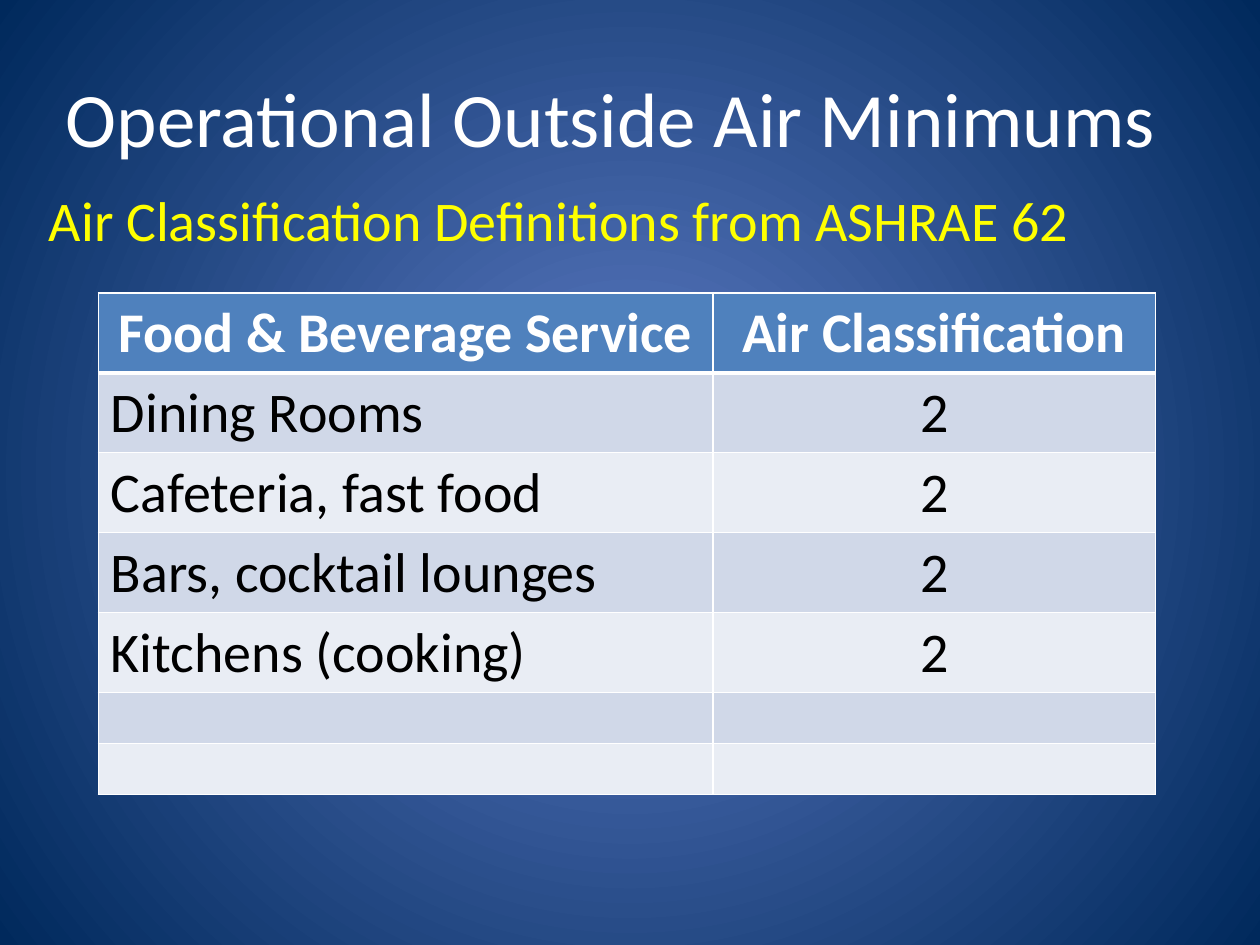
from lxml import etree
from pptx import Presentation, util as u
from pptx.dml.color import RGBColor
from pptx.enum import text
from pptx.oxml import ns


def rgb(value):
    """Turn a hex string into a colour."""
    return RGBColor.from_string(value)


class Deck:
    """Hold the style and the current slide, with lengths as shares of its size."""

    font = "Calibri"
    white, black, yellow = "FFFFFF", "000000", "FFFF00"
    header_fill, bands = "4F81BD", ("D0D8E8", "E9EDF4")
    glow, edge = "5E7CC5", "00295C"
    title_size, body_size = 44, 32

    def __init__(self, width, height):
        """Start a presentation with one title-only slide."""
        self.show = Presentation()
        self.show.slide_width, self.show.slide_height = u.Inches(width), u.Inches(height)
        self.slide = self.show.slides.add_slide(self.show.slide_layouts[5])

    def across(self, share):
        """Return a share of the slide's width."""
        return u.Emu(round(self.show.slide_width * share))

    def down(self, share):
        """Return a share of the slide's height."""
        return u.Emu(round(self.show.slide_height * share))

    def box(self, left, top, width, height):
        """Return a rectangle given in shares."""
        return self.across(left), self.down(top), self.across(width), self.down(height)

    def put_words(self, frame, words, size, color, bold=False, align=text.PP_ALIGN.LEFT):
        """Put styled words into a text frame."""
        frame.text = words
        for paragraph in frame.paragraphs:
            paragraph.alignment = align
            for run in paragraph.runs:
                run.font.name, run.font.size, run.font.bold = self.font, u.Pt(size), bold
                run.font.color.rgb = rgb(color)

    def background(self):
        """Fill the background with a radial glow."""
        fill = self.slide.background.fill
        fill.gradient()
        for stop, color, position in zip(fill.gradient_stops, (self.glow, self.edge), (0, 1)):
            stop.color.rgb, stop.position = rgb(color), position
        linear = self.slide.element.find(".//" + ns.qn("a:lin"))
        radial = etree.Element(ns.qn("a:path"), {"path": "circle"})
        etree.SubElement(radial, ns.qn("a:fillToRect"), dict.fromkeys("ltrb", "50000"))
        linear.getparent().replace(linear, radial)

    def title(self, words, *place):
        """Place and fill the title."""
        heading = self.slide.shapes.title
        heading.left, heading.top, heading.width, heading.height = self.box(*place)
        heading.text_frame.vertical_anchor = text.MSO_ANCHOR.MIDDLE
        self.put_words(heading.text_frame, words, self.title_size, self.white,
                       align=text.PP_ALIGN.CENTER)

    def subtitle(self, words, *place):
        """Add the line below the title."""
        frame = self.slide.shapes.add_textbox(*self.box(*place)).text_frame
        frame.word_wrap = False
        self.put_words(frame, words, self.body_size, self.yellow)

    def borders(self, cell, **weights):
        """Draw white cell borders with a weight in points per side."""
        properties = cell._tc.get_or_add_tcPr()
        for index, (side, weight) in enumerate(weights.items()):
            line = etree.Element(ns.qn("a:ln" + side), w=str(u.Pt(weight)))
            solid = etree.SubElement(line, ns.qn("a:solidFill"))
            etree.SubElement(solid, ns.qn("a:srgbClr"), val=self.white)
            properties.insert(index, line)

    def table(self, rows, left, top, columns, text_row, blank_row):
        """Add a banded table with a bold header row."""
        heights = [text_row if any(row) else blank_row for row in rows]
        place = self.box(left, top, sum(columns), sum(heights))
        grid = self.slide.shapes.add_table(len(rows), len(columns), *place).table
        for column, share in zip(grid.columns, columns):
            column.width = self.across(share)
        for r, (row, height) in enumerate(zip(rows, heights)):
            grid.rows[r].height = self.down(height)
            header = r == 0
            for c, words in enumerate(row):
                cell = grid.cell(r, c)
                cell.fill.solid()
                cell.fill.fore_color.rgb = rgb(self.header_fill if header else self.bands[(r - 1) % 2])
                self.borders(cell, L=1, R=1, T=3 if r == 1 else 1, B=3 if header else 1)
                if words:
                    centred = header or c > 0
                    self.put_words(cell.text_frame, words, self.body_size,
                                   self.white if header else self.black, header,
                                   text.PP_ALIGN.CENTER if centred else text.PP_ALIGN.LEFT)
                if header and c > 0:
                    cell.vertical_anchor = text.MSO_ANCHOR.MIDDLE


def main():
    """Build the slide and save it."""
    deck = Deck(10, 7.5)
    deck.background()
    deck.title("Operational Outside Air Minimums ", 0.017, 0.04, 0.95, 0.167)
    deck.subtitle("Air Classification Definitions from ASHRAE 62", 0.029, 0.19, 0.839, 0.121)
    spaces = ["Dining Rooms", "Cafeteria, fast food", "Bars, cocktail lounges", "Kitchens (cooking)"]
    rows = [("Food & Beverage Service", "Air Classification")]
    rows += [(space, "2") for space in spaces] + [("", "")] * 2
    deck.table(rows, 0.078, 0.31, (0.488, 0.351), 0.0845, 0.054)
    deck.show.save("out.pptx")


if __name__ == "__main__":
    main()
